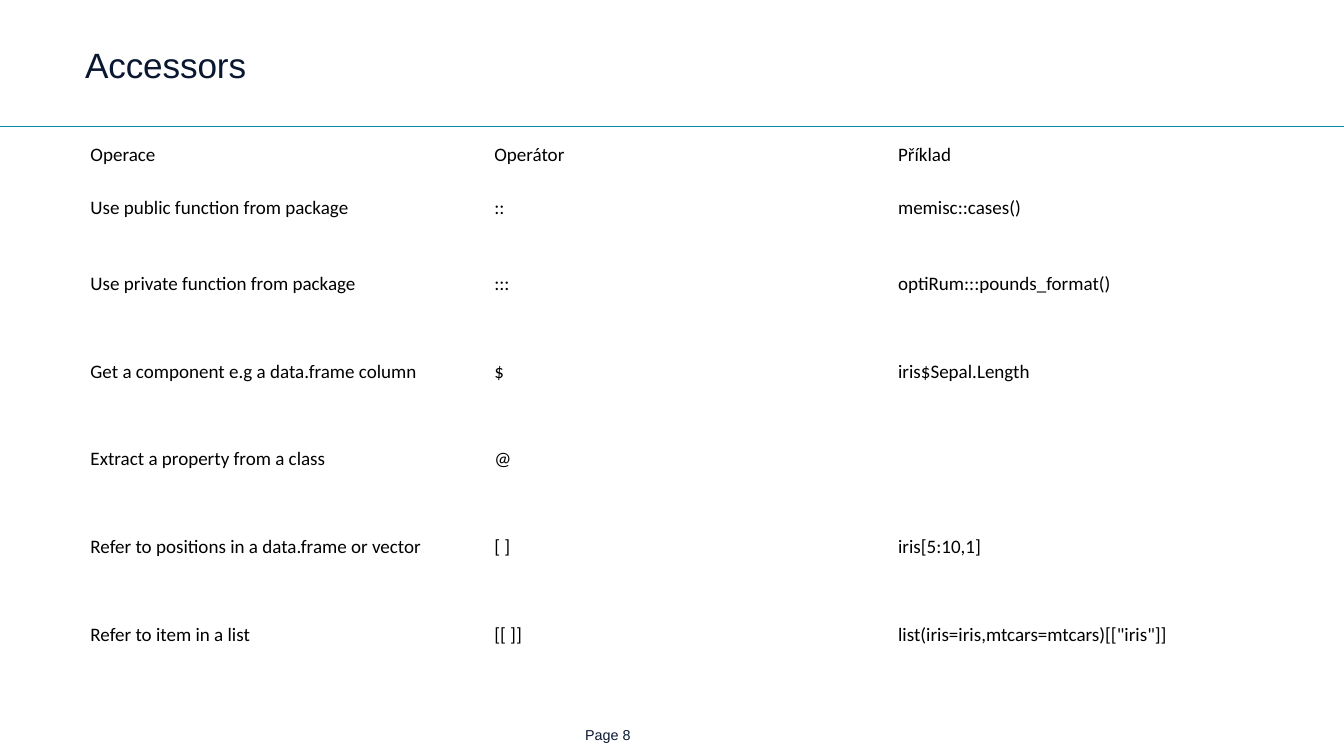
from dataclasses import dataclass

from lxml import etree
from pptx import Presentation
from pptx.dml.color import RGBColor
from pptx.enum.shapes import MSO_CONNECTOR
from pptx.enum.text import MSO_ANCHOR as Anchor, PP_ALIGN as Align
from pptx.oxml.ns import qn
from pptx.util import Inches, Pt


@dataclass(frozen=True)
class Theme:
    heading_font: str = "Arial"
    table_font: str = "Calibri"
    navy: RGBColor = RGBColor(0x0A, 0x17, 0x31)
    black: RGBColor = RGBColor(0, 0, 0)
    teal: RGBColor = RGBColor(0x00, 0x8C, 0xA8)
    title_size: float = 27.7
    table_size: float = 15
    footer_size: float = 11.3


THEME = Theme()
PAGE_WIDTH, PAGE_HEIGHT = 14.7, 8.27
LEFT, CONTENT_WIDTH = 0.93, 13.25

# Header first, then one accessor per row
ACCESSORS = [
    ("Operace", "Operátor", "Příklad"),
    ("Use public function from package", "::", "memisc::cases()"),
    ("Use private function from package", ":::", "optiRum:::pounds_format()"),
    ("Get a component e.g a data.frame column", "$", "iris$Sepal.Length"),
    ("Extract a property from a class", "@", ""),
    ("Refer to positions in a data.frame or vector", "[ ]", "iris[5:10,1]"),
    ("Refer to item in a list", "[[ ]]", 'list(iris=iris,mtcars=mtcars)[["iris"]]'),
]
ROW_HEIGHTS = [0.32, 0.83, 0.83, 1.09, 0.83, 1.09, 0.83]


def set_margins(target, left, top, right, bottom):
    target.margin_left, target.margin_top = Inches(left), Inches(top)
    target.margin_right, target.margin_bottom = Inches(right), Inches(bottom)


def style_font(font, name, size, color):
    font.name, font.size, font.bold = name, Pt(size), False
    font.color.rgb = color


def write_text(box, text, anchor, size):
    frame = box.text_frame
    frame.word_wrap = True
    frame.vertical_anchor = anchor
    frame.text = text
    para = frame.paragraphs[0]
    para.alignment = Align.LEFT
    style_font(para.runs[0].font, THEME.heading_font, size, THEME.navy)
    return para


def add_title(page, text):
    title = page.shapes.title
    title.left, title.top = Inches(LEFT), Inches(0.55)
    title.width, title.height = Inches(CONTENT_WIDTH), Inches(0.7)
    set_margins(title.text_frame, 0, 0, 0.09, 0)
    para = write_text(title, text, Anchor.TOP, THEME.title_size)
    para.line_spacing = 0.85
    para.space_before, para.space_after = Pt(0), Pt(7.5)
    para.runs[0].font._element.set("spc", "-10")


def add_rule(page, top):
    rule = page.shapes.add_connector(
        MSO_CONNECTOR.STRAIGHT, 0, Inches(top), Inches(PAGE_WIDTH), Inches(top))
    rule.line.color.rgb = THEME.teal
    rule.line.width = Pt(0.75)
    etree.SubElement(rule._element.spPr, qn("a:effectLst"))


def fill_cell(cell, text):
    cell.fill.background()
    cell.vertical_anchor = Anchor.MIDDLE
    set_margins(cell, 0.06, 0.03, 0.06, 0.03)
    cell.text = text
    para = cell.text_frame.paragraphs[0]
    for item in (para, *para.runs):
        style_font(item.font, THEME.table_font, THEME.table_size, THEME.black)


def add_accessor_table(page, top):
    column_count = len(ACCESSORS[0])
    table = page.shapes.add_table(
        len(ACCESSORS), column_count, Inches(LEFT), Inches(top),
        Inches(CONTENT_WIDTH), Inches(sum(ROW_HEIGHTS))).table
    table.first_row = table.horz_banding = False
    for column in table.columns:
        column.width = Inches(CONTENT_WIDTH / column_count)
    for row, height, texts in zip(table.rows, ROW_HEIGHTS, ACCESSORS):
        row.height = Inches(height)
        for cell, text in zip(row.cells, texts):
            fill_cell(cell, text)


def add_page_number(page, text):
    box = page.shapes.add_textbox(
        Inches(6.36), Inches(7.97), Inches(0.96), Inches(0.16))
    set_margins(box.text_frame, 0.04, 0, 0, 0)
    write_text(box, text, Anchor.BOTTOM, THEME.footer_size)


def main():
    deck = Presentation()
    deck.slide_width, deck.slide_height = Inches(PAGE_WIDTH), Inches(PAGE_HEIGHT)
    page = deck.slides.add_slide(deck.slide_layouts.get_by_name("Title Only"))

    # Heading and its rule
    add_rule(page, 1.38)
    add_title(page, "Accessors")

    # Body and footer
    add_accessor_table(page, 1.54)
    add_page_number(page, "Page 8")
    deck.save("out.pptx")


if __name__ == "__main__":
    main()
